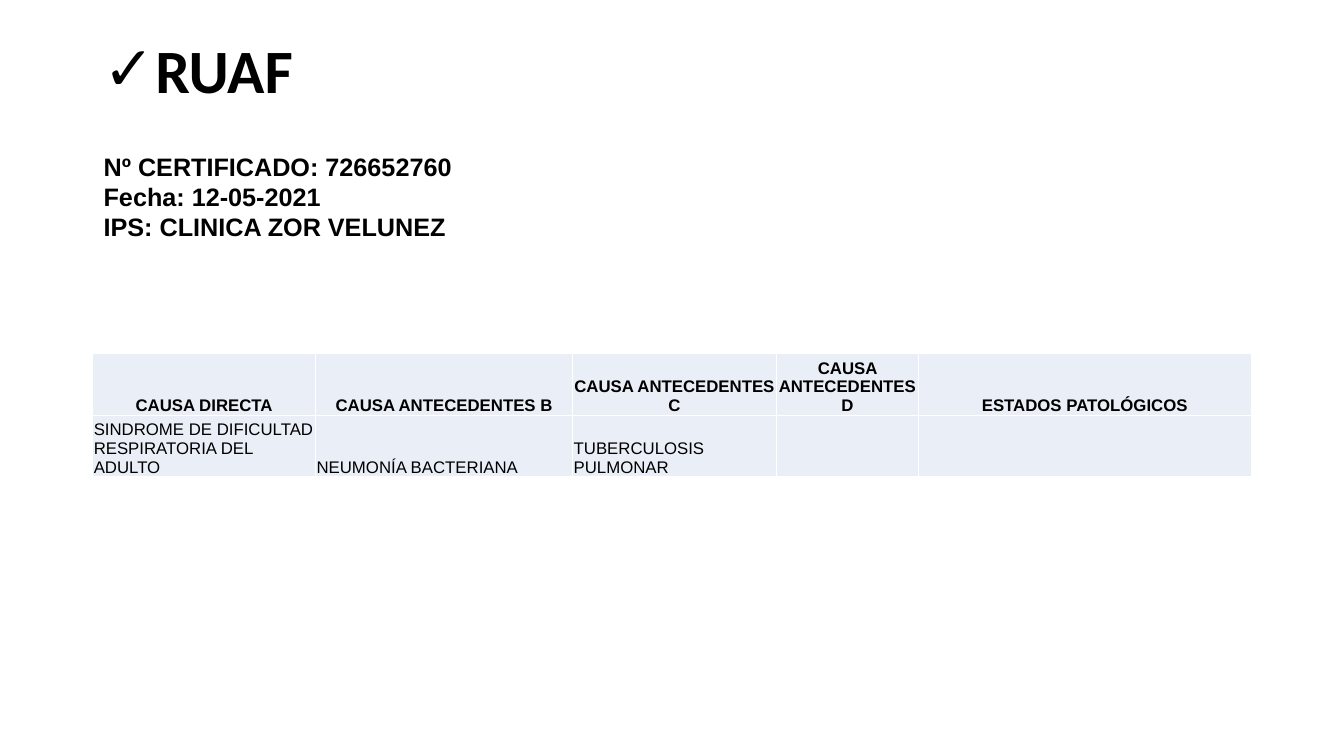
from lxml.etree import SubElement as Sub
from pptx import Presentation
from pptx.dml.color import RGBColor
from pptx.enum.text import MSO_ANCHOR as Anchor, PP_ALIGN as Align
from pptx.oxml import parse_xml
from pptx.oxml.ns import nsdecls, qn
from pptx.util import Inches, Pt

# Content
TITLE = ["RUAF"]
FACTS = ["Nº CERTIFICADO: 726652760", "Fecha: 12-05-2021", "IPS: CLINICA ZOR VELUNEZ"]
ROWS = [
    ["CAUSA DIRECTA", "CAUSA ANTECEDENTES B", "CAUSA ANTECEDENTES C",
     "CAUSA ANTECEDENTES D", "ESTADOS PATOLÓGICOS"],
    ["SINDROME DE DIFICULTAD RESPIRATORIA DEL ADULTO", "NEUMONÍA BACTERIANA",
     "TUBERCULOSIS PULMONAR", "", ""],
]

# Grid, in inches
WIDE, HIGH = 13.33, 7.5
LEFT, HEAD = 0.93, 1.45
COLS = [2.21, 2.55, 2.02, 1.41, 3.3]
STEP = 0.6
INDENT = 0.31

BLACK = RGBColor(0, 0, 0)
PALE = RGBColor(0xEA, 0xEF, 0xF7)
WHITE = RGBColor(0xFF, 0xFF, 0xFF)


def write(frame, lines, size=12, font="Arial", bold=True, align=Align.LEFT, space=1.0):
    frame.word_wrap = True
    for i, line in enumerate(lines):
        para = frame.paragraphs[0] if i == 0 else frame.add_paragraph()
        para.alignment, para.line_spacing = align, space
        para.font.size = Pt(size)
        if line:
            run = para.add_run()
            run.text = line
            face = run.font
            face.name, face.size, face.bold = font, Pt(size), bold
            face.color.rgb = BLACK


def edge(cell):
    props = cell._tc.get_or_add_tcPr()
    for i, side in enumerate("LRTB"):
        props.insert(i, parse_xml(
            f'<a:ln{side} {nsdecls("a")} w="{Pt(1)}"><a:solidFill>'
            f'<a:srgbClr val="{WHITE}"/></a:solidFill></a:ln{side}>'))


deck = Presentation()
deck.slide_width, deck.slide_height = Inches(WIDE), Inches(HIGH)
slide = deck.slides.add_slide(deck.slide_layouts[6])
shapes = slide.shapes

# Title with a check mark bullet
frame = shapes.add_textbox(Inches(LEFT), 0, Inches(11.5), Inches(HEAD)).text_frame
frame.vertical_anchor = Anchor.MIDDLE
write(frame, TITLE, size=44, font="Calibri", space=0.9)
props = frame.paragraphs[0]._p.get_or_add_pPr()
props.set("marL", str(Inches(INDENT)))
props.set("indent", str(-Inches(INDENT)))
Sub(props, qn("a:buFont"), typeface="Arial")
Sub(props, qn("a:buChar"), char="✓")

# Certificate facts
box = shapes.add_textbox(Inches(LEFT), Inches(HEAD), Inches(9.5), Inches(1.01))
write(box.text_frame, FACTS, size=18)

# Table of causes
table = shapes.add_table(len(ROWS), len(COLS), Inches(0.92), Inches(3.51),
                         Inches(sum(COLS)), Inches(STEP * len(ROWS))).table
for col, width in zip(table.columns, COLS):
    col.width = Inches(width)
for r, row in enumerate(ROWS):
    table.rows[r].height = Inches(STEP)
    for c, text in enumerate(row):
        cell = table.cell(r, c)
        cell.margin_left = cell.margin_right = cell.margin_top = Inches(0.01)
        cell.margin_bottom = 0
        cell.vertical_anchor = Anchor.BOTTOM
        cell.fill.solid()
        cell.fill.fore_color.rgb = PALE
        edge(cell)
        write(cell.text_frame, [text], bold=r == 0,
              align=Align.CENTER if r == 0 else Align.LEFT)

deck.save("out.pptx")
